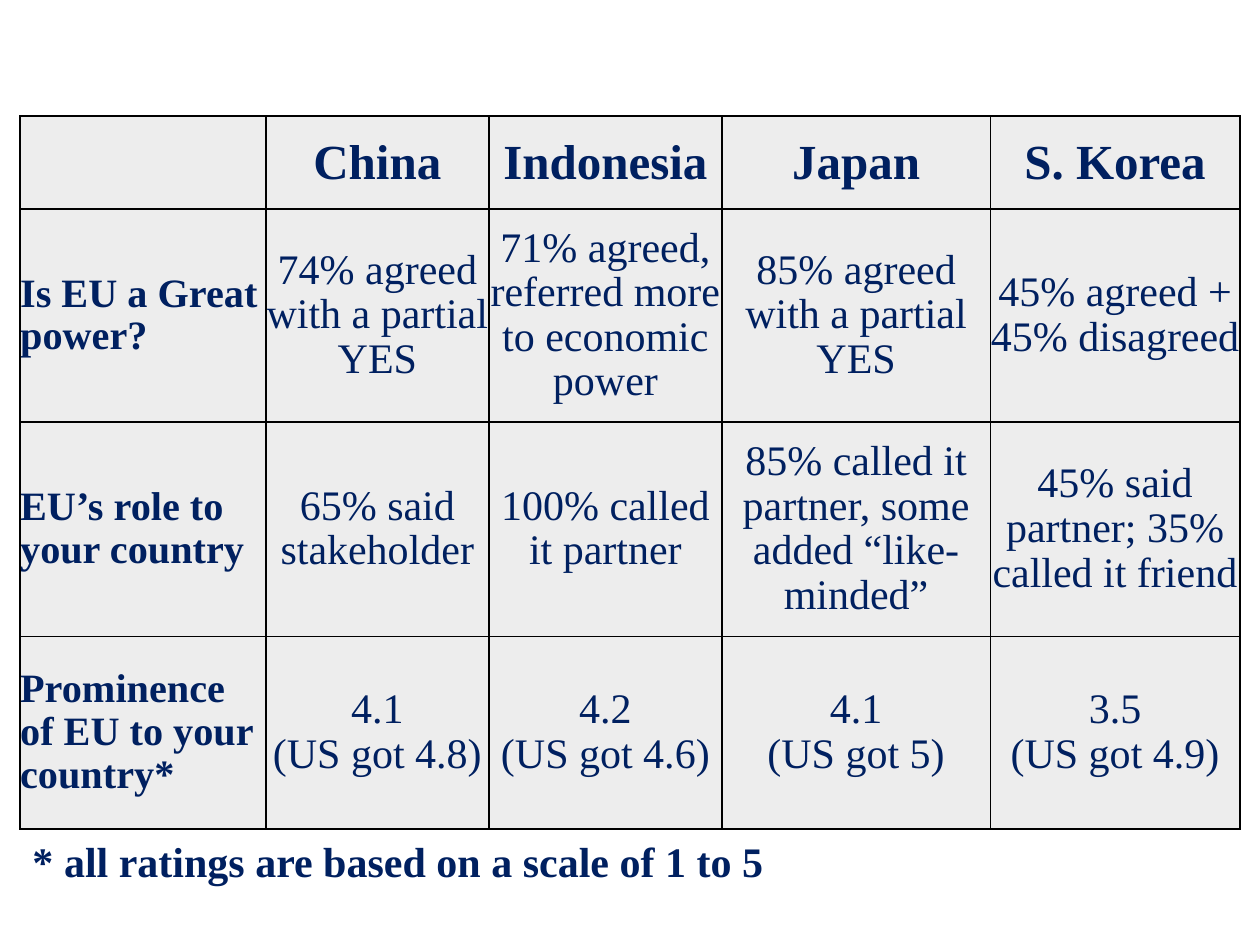
from lxml.etree import SubElement
from pptx import Presentation
from pptx.dml.color import RGBColor
from pptx.enum.text import MSO_ANCHOR, MSO_AUTO_SIZE, PP_ALIGN
from pptx.oxml.ns import qn
from pptx.util import Inches, Pt

NAVY = RGBColor(0x00, 0x20, 0x60)
PALE_GREY = RGBColor(0xED, 0xED, 0xED)
BLACK = RGBColor(0x00, 0x00, 0x00)
FONT = "Times New Roman"
LEFT = 0.16
TABLE_TOP = 0.92
COLUMN_WIDTHS = [1.95, 1.77, 1.85, 2.13, 1.98]
ROW_HEIGHTS = [0.74, 1.69, 1.7, 1.53]
ROWS = [
    ["", "China", "Indonesia", "Japan", "S. Korea"],
    ["Is EU a Great power?", "74% agreed with a partial YES",
     "71% agreed, referred more to economic power",
     "85% agreed with a partial YES", "45% agreed + 45% disagreed"],
    ["EU’s role to your country", "65% said stakeholder", "100% called it partner",
     "85% called it partner, some added “like-minded”",
     "45% said partner; 35% called it friend"],
    ["Prominence of EU to your country*", "4.1\n(US got 4.8)", "4.2\n(US got 4.6)",
     "4.1\n(US got 5)", "3.5\n(US got 4.9)"],
]


def style_paragraph(para, size, bold, align=PP_ALIGN.LEFT):
    """Apply the slide's font and colour to a paragraph."""
    para.alignment = align
    para.font.name = FONT
    para.font.size = Pt(size)
    para.font.bold = bold
    para.font.color.rgb = NAVY


def add_borders(cell):
    """Draw a thin black line on every side of a cell."""
    properties = cell._tc.get_or_add_tcPr()
    for position, side in enumerate(("lnL", "lnR", "lnT", "lnB")):
        line = SubElement(properties, qn(f"a:{side}"), w=str(Pt(1)))
        fill = SubElement(line, qn("a:solidFill"))
        SubElement(fill, qn("a:srgbClr"), val=str(BLACK))
        properties.insert(position, line)


def fill_cell(cell, text, is_header, is_label):
    """Write and format one table cell."""
    cell.fill.solid()
    cell.fill.fore_color.rgb = PALE_GREY
    add_borders(cell)
    cell.vertical_anchor = MSO_ANCHOR.MIDDLE
    if not is_header:
        cell.margin_left = cell.margin_right = cell.margin_top = cell.margin_bottom = 0
    cell.text = text
    size = 28 if is_header else 23 if is_label else 24
    align = PP_ALIGN.LEFT if is_label else PP_ALIGN.CENTER
    for para in cell.text_frame.paragraphs:
        style_paragraph(para, size, is_header or is_label, align)
        if not is_header:
            para.line_spacing = 0.96


def add_survey_table(page):
    """Add the table of survey answers by country."""
    frame = page.shapes.add_table(
        len(ROWS), len(COLUMN_WIDTHS), Inches(LEFT), Inches(TABLE_TOP),
        Inches(sum(COLUMN_WIDTHS)), Inches(sum(ROW_HEIGHTS)))
    table = frame.table
    table.horizontal_banding = False
    for column, width in zip(table.columns, COLUMN_WIDTHS):
        column.width = Inches(width)
    for r, (height, texts) in enumerate(zip(ROW_HEIGHTS, ROWS)):
        table.rows[r].height = Inches(height)
        for c, text in enumerate(texts):
            fill_cell(table.cell(r, c), text, r == 0, c == 0)


def add_footnote(page, text):
    """Add the note right below the table."""
    top = TABLE_TOP + sum(ROW_HEIGHTS)
    box = page.shapes.add_textbox(Inches(LEFT), Inches(top), Inches(9.56), Inches(0.5))
    box.text_frame.word_wrap = True
    box.text_frame.auto_size = MSO_AUTO_SIZE.SHAPE_TO_FIT_TEXT
    para = box.text_frame.paragraphs[0]
    para.text = text
    style_paragraph(para, 24, True)


def main():
    """Build and save the slide."""
    deck = Presentation()
    deck.slide_width = Inches(10)
    deck.slide_height = Inches(7.5)
    page = deck.slides.add_slide(deck.slide_layouts[6])
    add_survey_table(page)
    add_footnote(page, "* all ratings are based on a scale of 1 to 5")
    deck.save("out.pptx")


if __name__ == "__main__":
    main()
